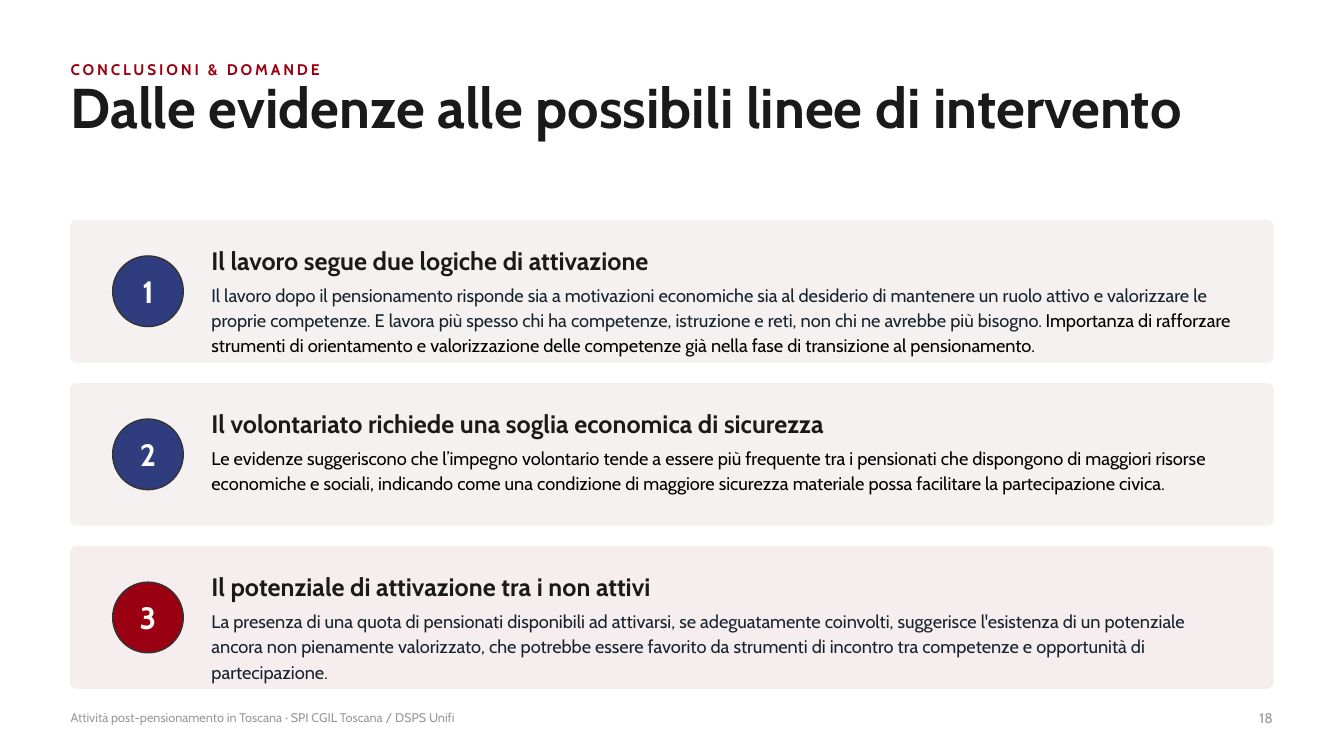
from dataclasses import dataclass

from pptx import Presentation
from pptx import util as u
from pptx.dml.color import RGBColor
from pptx.enum import shapes, text


@dataclass(frozen=True)
class Theme:
    font: str = "Cabin"
    red: str = "990011"
    blue: str = "2F3C7E"
    ink: str = "1A1A1A"
    slate: str = "16232E"
    black: str = "000000"
    white: str = "FFFFFF"
    grey: str = "9A9A9A"
    outline: str = "333333"
    card: str = "F4F1F0"
    card_red: str = "F6EDEE"
    title_size: int = 40
    number_size: int = 22
    heading_size: int = 18
    body_size: int = 13
    label_size: int = 11
    page_size: int = 10
    footer_size: int = 9


THEME = Theme()
TOP, MIDDLE = text.MSO_ANCHOR.TOP, text.MSO_ANCHOR.MIDDLE
LEFT, CENTER, RIGHT = text.PP_ALIGN.LEFT, text.PP_ALIGN.CENTER, text.PP_ALIGN.RIGHT

# Page grid, in centimetres
MARGIN, CONTENT_WIDTH = 1.78, 30.3
CARD_TOP, CARD_HEIGHT, CARD_STEP = 5.56, 3.56, 4.11
CIRCLE_LEFT, CIRCLE_SIZE = 2.84, 1.78
TEXT_LEFT, TEXT_WIDTH = 5.33, 25.48
FOOTER_TOP, LABEL_HEIGHT = 17.73, 0.71

# Heading, text spans with colours, card fill, circle fill, text width
CARDS = [
    ("Il lavoro segue due logiche di attivazione",
     [("Il lavoro dopo il pensionamento risponde sia a motivazioni economiche sia al "
       "desiderio di mantenere un ruolo attivo e valorizzare le proprie competenze. "
       "E lavora più spesso chi ha competenze, istruzione e reti, non chi ne avrebbe "
       "più bisogno. ", THEME.slate),
      ("Importanza di rafforzare strumenti di orientamento e valorizzazione delle "
       "competenze già nella fase di transizione al pensionamento.", THEME.black)],
     THEME.card, THEME.blue, 26.47),
    ("Il volontariato richiede una soglia economica di sicurezza",
     [("Le evidenze suggeriscono che l’impegno volontario tende a essere più frequente "
       "tra i pensionati che dispongono di maggiori risorse economiche e sociali, "
       "indicando come una condizione di maggiore sicurezza materiale possa facilitare "
       "la partecipazione civica.", THEME.black)],
     THEME.card, THEME.blue, TEXT_WIDTH),
    ("Il potenziale di attivazione tra i non attivi",
     [("La presenza di una quota di pensionati disponibili ad attivarsi, se adeguatamente "
       "coinvolti, suggerisce l'esistenza di un potenziale ancora non pienamente "
       "valorizzato, che potrebbe essere favorito da strumenti di incontro tra competenze "
       "e opportunità di partecipazione.", THEME.slate)],
     THEME.card_red, THEME.red, TEXT_WIDTH),
]


def lengths(*values):
    return [u.Cm(value) for value in values]


def write(box, spans, size, bold=False, align=LEFT, anchor=MIDDLE, leading=None):
    """Fill a shape with one paragraph of (text, colour) spans."""
    frame = box.text_frame
    frame.margin_left = frame.margin_top = frame.margin_right = frame.margin_bottom = 0
    frame.word_wrap = True
    frame.auto_size = text.MSO_AUTO_SIZE.NONE
    frame.vertical_anchor = anchor
    para = frame.paragraphs[0]
    para.alignment = align
    if leading:
        para.line_spacing = u.Pt(leading)
    for words, color in spans:
        span = para.add_run()
        span.text = words
        span.font.name = THEME.font
        span.font.size = u.Pt(size)
        span.font.bold = bold
        span.font.color.rgb = RGBColor.from_string(color)
    return para


def add_text(page, at, spans, size, **style):
    return write(page.shapes.add_textbox(*lengths(*at)), spans, size, **style)


def add_shape(page, kind, at, fill, line):
    shape = page.shapes.add_shape(kind, *lengths(*at))
    shape.shadow.inherit = False
    shape.fill.solid()
    shape.fill.fore_color.rgb = RGBColor.from_string(fill)
    shape.line.color.rgb = RGBColor.from_string(line)
    shape.line.width = u.Pt(1)
    return shape


def add_header(page, label, heading):
    para = add_text(page, (MARGIN, 1.4, CONTENT_WIDTH, LABEL_HEIGHT),
                    [(label, THEME.red)], THEME.label_size, bold=True)
    para.runs[0].font._element.set("spc", "200")  # letter spacing of 2 pt
    title = page.shapes.title
    title.left, title.top, title.width, title.height = lengths(
        MARGIN, 2.31, CONTENT_WIDTH, 2.16)
    write(title, [(heading, THEME.ink)], THEME.title_size, bold=True,
          anchor=TOP, leading=34)


def add_card(page, index, heading, spans, fill, accent, width):
    top = CARD_TOP + index * CARD_STEP
    panel = add_shape(page, shapes.MSO_SHAPE.ROUNDED_RECTANGLE,
                      (MARGIN, top, CONTENT_WIDTH, CARD_HEIGHT), fill, fill)
    panel.adjustments[0] = 0.04
    circle = add_shape(page, shapes.MSO_SHAPE.OVAL,
                       (CIRCLE_LEFT, top + (CARD_HEIGHT - CIRCLE_SIZE) / 2,
                        CIRCLE_SIZE, CIRCLE_SIZE), accent, THEME.outline)
    write(circle, [(str(index + 1), THEME.white)], THEME.number_size,
          bold=True, align=CENTER)
    add_text(page, (TEXT_LEFT, top + 0.51, TEXT_WIDTH, 0.97),
             [(heading, THEME.ink)], THEME.heading_size, bold=True)
    add_text(page, (TEXT_LEFT, top + 1.52, width, 1.78), spans,
             THEME.body_size, anchor=TOP, leading=18)


def add_footer(page, source, number):
    add_text(page, (MARGIN, FOOTER_TOP, 24.13, LABEL_HEIGHT),
             [(source, THEME.grey)], THEME.footer_size)
    add_text(page, (30.56, FOOTER_TOP, 1.52, LABEL_HEIGHT),
             [(number, THEME.grey)], THEME.page_size, align=RIGHT)


def main():
    deck = Presentation()
    deck.slide_width, deck.slide_height = lengths(33.87, 19.05)
    page = deck.slides.add_slide(deck.slide_layouts.get_by_name("Title Only"))
    add_header(page, "CONCLUSIONI & DOMANDE",
               "Dalle evidenze alle possibili linee di intervento")
    for index, card in enumerate(CARDS):
        add_card(page, index, *card)
    add_footer(page, "Attività post-pensionamento in Toscana · SPI CGIL Toscana / DSPS Unifi",
               "18")
    deck.save("out.pptx")


if __name__ == "__main__":
    main()
